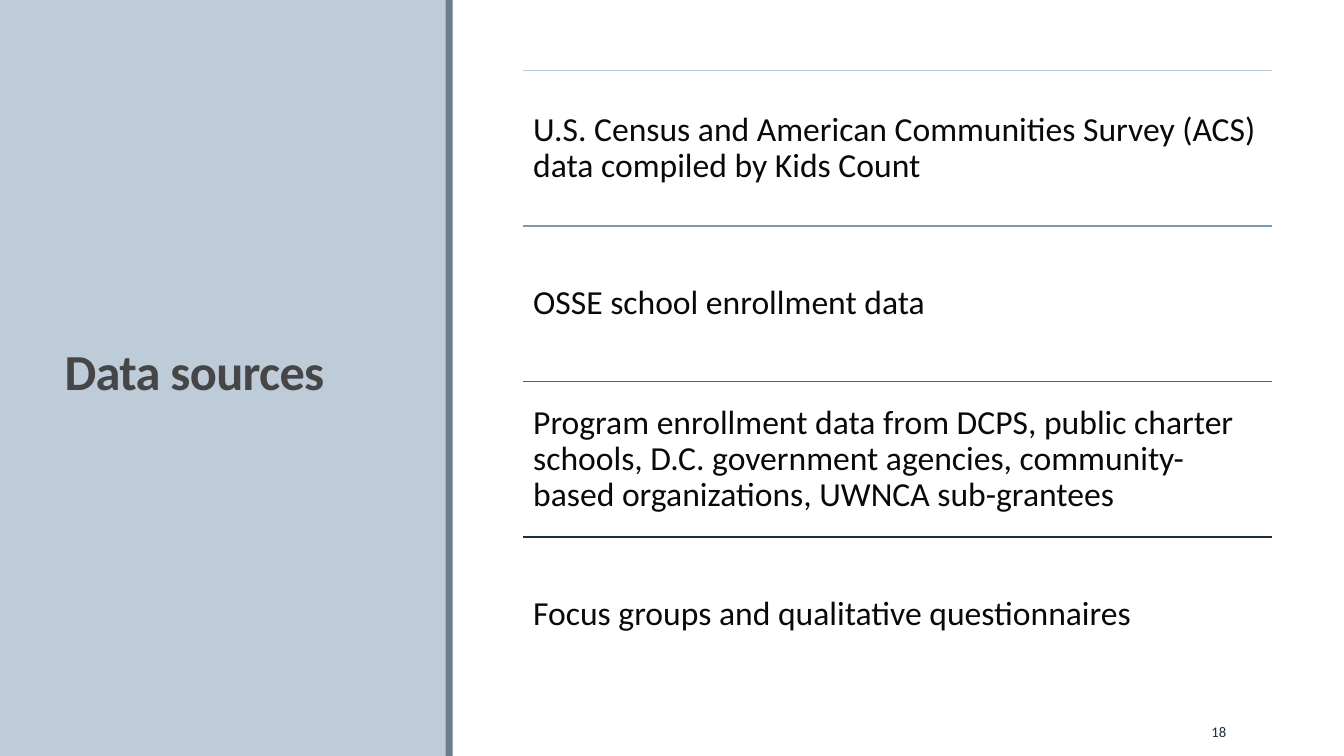
from lxml.etree import SubElement
from pptx import Presentation
from pptx.dml.color import RGBColor
from pptx.enum.shapes import MSO_CONNECTOR, MSO_SHAPE
from pptx.enum.text import MSO_ANCHOR, PP_ALIGN
from pptx.oxml.ns import qn
from pptx.util import Inches, Pt

# Content
TITLE = "Data sources"
PAGE_NUMBER = "18"
SOURCES = [  # rule colour, text
    ("BECCDA", "U.S. Census and American Communities Survey (ACS) data compiled by Kids Count"),
    ("789AB5", "OSSE school enrollment data"),
    ("43677F", "Program enrollment data from DCPS, public charter schools, D.C. government "
               "agencies, community-based organizations, UWNCA sub-grantees"),
    ("1D303A", "Focus groups and qualitative questionnaires"),
]

# Theme
THEME = {
    "font": "Calibri",
    "panel": "BECCDA", "panel_edge": "6D7D8C",
    "title": {"size": Pt(36), "bold": True, "color": "464646"},
    "source": {"size": Pt(24), "bold": False, "color": "090909"},
    "number": {"size": Pt(10.5), "bold": False, "color": "1D303A"},
    "rule_width": Pt(1.25),
}

# Layout in inches
PANELS = [(0, 4.43, THEME["panel"]), (4.42, 0.07, THEME["panel_edge"])]
LIST_LEFT, LIST_TOP, LIST_WIDTH, ROW_HEIGHT = 5.19, 0.7, 7.43, 1.543


def write_text(shape, text, style, **paragraph_format):
    frame = shape.text_frame
    frame.word_wrap = True
    frame.vertical_anchor = MSO_ANCHOR.MIDDLE
    paragraph = frame.paragraphs[0]
    for name, value in paragraph_format.items():
        setattr(paragraph, name, value)
    run = paragraph.add_run()
    run.text = text
    run.font.name = THEME["font"]
    run.font.size = style["size"]
    run.font.bold = style["bold"]
    run.font.color.rgb = RGBColor.from_string(style["color"])
    return run


def add_rule(slide, top, color):
    start, end = Inches(LIST_LEFT), Inches(LIST_LEFT + LIST_WIDTH)
    rule = slide.shapes.add_connector(
        MSO_CONNECTOR.STRAIGHT, start, Inches(top), end, Inches(top))
    rule.line.color.rgb = RGBColor.from_string(color)
    rule.line.width = THEME["rule_width"]
    SubElement(rule._element.spPr, qn("a:effectLst"))


def add_source(slide, top, text):
    box = slide.shapes.add_textbox(
        Inches(LIST_LEFT), Inches(top), Inches(LIST_WIDTH), Inches(ROW_HEIGHT))
    for side in ("left", "top", "right", "bottom"):
        setattr(box.text_frame, f"margin_{side}", Inches(0.1))
    write_text(box, text, THEME["source"], line_spacing=0.9)


def main():
    presentation = Presentation()
    presentation.slide_width, presentation.slide_height = Inches(13.33), Inches(7.5)
    slide = presentation.slides.add_slide(presentation.slide_layouts[5])

    # Left panel and its edge
    for left, width, color in PANELS:
        panel = slide.shapes.add_shape(
            MSO_SHAPE.RECTANGLE, Inches(left), 0, Inches(width), presentation.slide_height)
        panel.shadow.inherit = False
        panel.fill.solid()
        panel.fill.fore_color.rgb = RGBColor.from_string(color)
        panel.line.fill.background()

    # Title, brought in front of the panel
    title = slide.shapes.title
    title.left, title.top = Inches(0.54), Inches(0.57)
    title.width, title.height = Inches(3.37), Inches(6.31)
    run = write_text(title, TITLE, THEME["title"], line_spacing=0.85, alignment=PP_ALIGN.LEFT)
    run.font._element.set("spc", "-50")
    slide.shapes._spTree.append(title._element)

    # Ruled list of sources
    for index, (color, text) in enumerate(SOURCES):
        top = LIST_TOP + index * ROW_HEIGHT
        add_rule(slide, top, color)
        add_source(slide, top, text)

    # Page number
    number = slide.shapes.add_textbox(Inches(11.07), Inches(7.06), Inches(1.19), Inches(0.4))
    write_text(number, PAGE_NUMBER, THEME["number"],
               alignment=PP_ALIGN.RIGHT, space_after=Pt(6))

    presentation.save("out.pptx")


if __name__ == "__main__":
    main()
